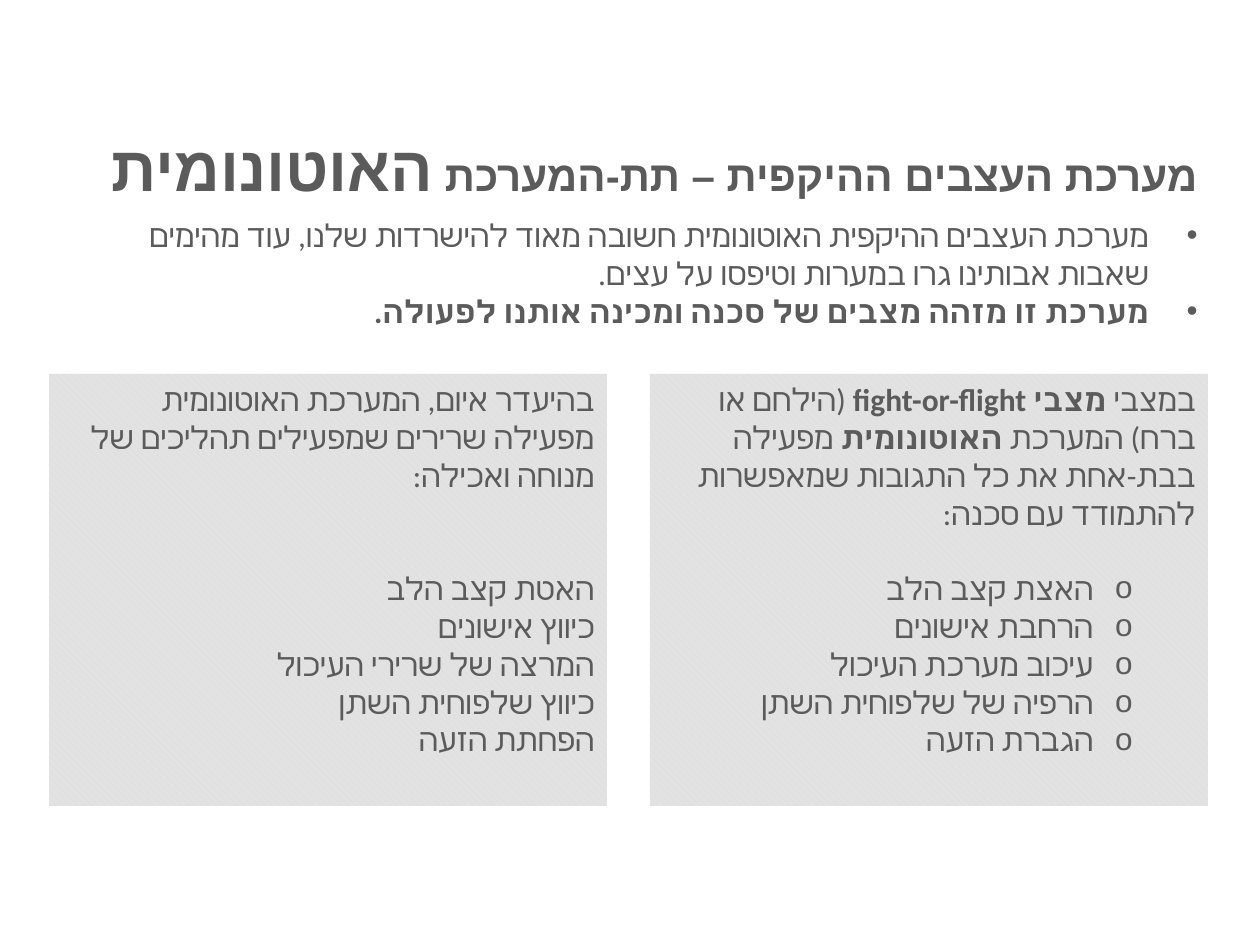
"""Builds a Hebrew slide on the autonomic nervous system."""
from dataclasses import dataclass
from typing import Any

from lxml import etree
from pptx import Presentation
from pptx import util as u
from pptx.dml.color import RGBColor
from pptx.enum import dml, shapes, text
from pptx.oxml.ns import qn

EMU_PER_PX = 914400 / 126


def px(length):
    return u.Emu(round(length * EMU_PER_PX))


def color(value):
    return RGBColor.from_string(value)


@dataclass
class SlideBuilder:
    slide: Any
    ink: str = "5B5B5B"
    stripe: str = "DCDCDC"
    ground: str = "E2E2E2"
    font: str = "Calibri"
    size: int = 18

    def text_box(self, left, top, width, height):
        shape = self.slide.shapes.add_textbox(*map(px, (left, top, width, height)))
        return self.prepare(shape)

    def panel(self, left, top, width, height):
        shape = self.slide.shapes.add_shape(
            shapes.MSO_SHAPE.RECTANGLE, *map(px, (left, top, width, height)))
        shape.shadow.inherit = False
        shape.fill.patterned()
        shape.fill.pattern = dml.MSO_PATTERN.WIDE_DOWNWARD_DIAGONAL
        shape.fill.fore_color.rgb = color(self.stripe)
        shape.fill.back_color.rgb = color(self.ground)
        shape.line.fill.background()
        return self.prepare(shape)

    def prepare(self, shape):
        frame = shape.text_frame
        frame.word_wrap = True
        frame.vertical_anchor = text.MSO_ANCHOR.TOP
        return frame

    def paragraph(self, frame, *runs, bullet=None, indent=0, hanging=0, level=0, before=0):
        first = frame.paragraphs[0]
        paragraph = frame.add_paragraph() if first.runs else first
        paragraph.alignment = text.PP_ALIGN.RIGHT
        paragraph.level = level
        if before:
            paragraph.space_before = u.Pt(before)
        properties = paragraph._p.get_or_add_pPr()
        properties.set("rtl", "1")
        if bullet:
            properties.set("marL", str(px(indent)))
            properties.set("indent", str(-px(hanging)))
            etree.SubElement(properties, qn("a:buFont")).set("typeface", "Arial")
            etree.SubElement(properties, qn("a:buChar")).set("char", bullet)
        for words, *style in runs:
            self.run(paragraph, words, *style)

    def run(self, paragraph, words, bold=False, size=None, font=None):
        run = paragraph.add_run()
        run.text = words
        run.font.size = u.Pt(size or self.size)
        run.font.bold = bold
        run.font.color.rgb = color(self.ink)
        run.font.name = font or self.font
        complex_script = etree.SubElement(run._r.get_or_add_rPr(), qn("a:cs"))
        complex_script.set("typeface", run.font.name)


def main():
    presentation = Presentation()
    presentation.slide_width, presentation.slide_height = px(1260), px(945)
    builder = SlideBuilder(presentation.slides.add_slide(presentation.slide_layouts[6]))

    title = builder.text_box(57, 122, 1153, 89)
    builder.paragraph(
        title,
        ("מערכת העצבים ההיקפית – תת-המערכת ", True, 24, "Arial"),
        ("האוטונומית", True, 36, "Arial"))

    summary = builder.text_box(57, 210, 1153, 204)
    for words, bold in (
        ("מערכת העצבים ההיקפית האוטונומית חשובה מאוד להישרדות שלנו, עוד מהימים "
         "שאבות אבותינו גרו במערות וטיפסו על עצים.", False),
        ("מערכת זו מזהה מצבים של סכנה ומכינה אותנו לפעולה.", True),
    ):
        builder.paragraph(summary, (words, bold), bullet="•", indent=48, hanging=48)

    danger = builder.panel(650, 374, 558, 432)
    builder.paragraph(
        danger,
        ("במצבי ",),
        ("מצבי fight-or-flight", True),
        (" (הילחם או ברח) המערכת ",),
        ("האוטונומית", True),
        (" מפעילה בבת-אחת את כל התגובות שמאפשרות להתמודד עם סכנה:",))
    danger_effects = ("האצת קצב הלב", "הרחבת אישונים", "עיכוב מערכת העיכול",
                      "הרפיה של שלפוחית השתן", "הגברת הזעה")
    for index, words in enumerate(danger_effects):
        builder.paragraph(danger, (words,), bullet="o", indent=102, hanging=39,
                          level=1, before=0 if index else 21.6)

    rest = builder.panel(49, 374, 558, 432)
    builder.paragraph(
        rest, ("בהיעדר איום, המערכת האוטונומית מפעילה שרירים שמפעילים "
               "תהליכים של מנוחה ואכילה:",))
    rest_effects = ("האטת קצב הלב", "כיווץ אישונים", "המרצה של שרירי העיכול",
                    "כיווץ שלפוחית השתן", "הפחתת הזעה")
    for index, words in enumerate(rest_effects):
        builder.paragraph(rest, (words,), before=0 if index else 43.2)

    presentation.save("out.pptx")


if __name__ == "__main__":
    main()
